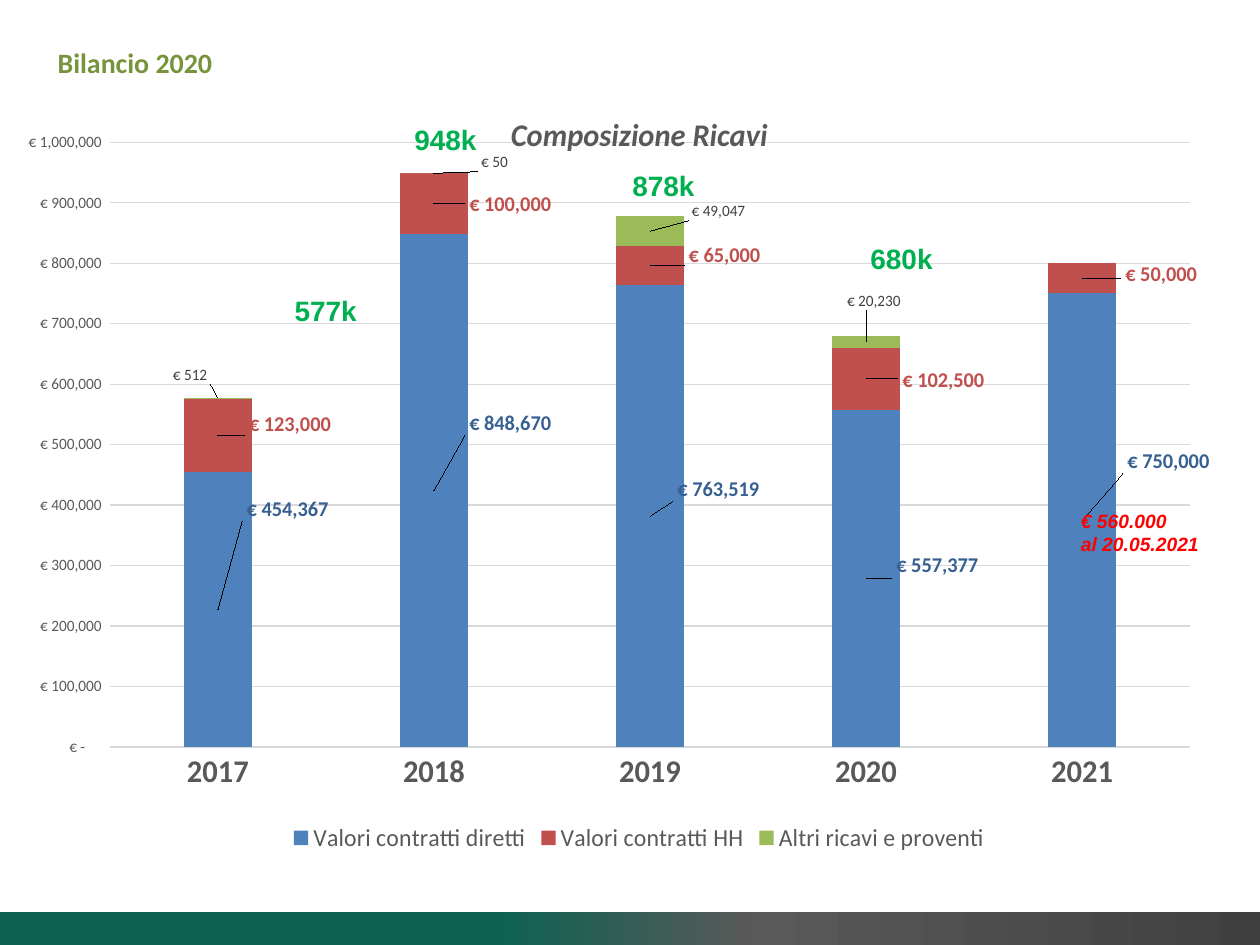
import copy

import pptx
import pptx.chart.data
import pptx.dml.color
import pptx.enum.chart
import pptx.enum.shapes
import pptx.enum.text
import pptx.oxml
import pptx.util
from pptx.util import Inches

COLORS = {"heading": "77933C", "total": "00B050", "note": "FF0000", "text": "595959",
          "grid": "D9D9D9", "direct": "4F81BD", "direct_label": "376092",
          "hh": "C0504D", "other": "9BBB59", "other_label": "404040"}
EURO = '_-"€"\\ * #,##0_-;\\-"€"\\ * #,##0_-;_-"€"\\ * "-"??_-;_-@_-'

YEARS = ["2017", "2018", "2019", "2020", "2021"]
# Label centres are slide positions in inches
SERIES = [
    {"name": "Valori contratti diretti", "values": [454367, 848670, 763519, 557377, 750000],
     "fill": "direct", "label": "direct_label", "size": 12, "bold": True,
     "centres": [(2.29, 4.04), (4.06, 3.36), (5.71, 3.88), (7.45, 4.49), (9.29, 3.66)]},
    {"name": "Valori contratti HH", "values": [123000, 100000, 65000, 102500, 50000],
     "fill": "hh", "label": "hh", "size": 12, "bold": True,
     "centres": [(2.31, 3.37), (4.06, 1.62), (5.76, 2.03), (7.5, 3.02), (9.23, 2.18)]},
    {"name": "Altri ricavi e proventi", "values": [512, 50, 49047, 20230, None],
     "fill": "other", "label": "other_label", "size": 9, "bold": False,
     "centres": [(1.49, 2.98), (3.93, 1.29), (5.71, 1.68), (6.93, 2.39), None]},
]
TOTALS = [("577k", 2.24, 2.28), ("948k", 3.19, 0.92), ("878k", 4.92, 1.29), ("680k", 6.81, 1.87)]
NOTE = ["€ 560.000", "al 20.05.2021"]
BAND = [(0, "404040"), (0.4, "595959"), (0.6, "0E6252"), (1, "0E6252")]

CHART = (0.2, 0.68, 9.45, 6.13)
INNER = (0.39, 0.45, 8.85, 4.8)            # plot area as set, in inches from the chart's corner
TITLE = (3.63, 0.17)                       # title, in inches from the chart's corner
PLOT = (0.86, 1.13, 8.58, 4.8)             # plot area as drawn, in inches on the slide
TOP_VALUE = 1000000
CHART_NS = 'xmlns:c="http://schemas.openxmlformats.org/drawingml/2006/chart"'
NO_LEADERS = (f'<c:extLst {CHART_NS}><c:ext uri="{{CE6537A1-D6FC-4f65-9D91-7224C49458BB}}" '
              'xmlns:c15="http://schemas.microsoft.com/office/drawing/2012/chart">'
              '<c15:showLeaderLines val="0"/></c:ext></c:extLst>')


def color(key):
    return pptx.dml.color.RGBColor.from_string(COLORS.get(key, key))


def style(font, size, key, bold=False, italic=False, name="Calibri"):
    font.size, font.bold, font.italic, font.name = pptx.util.Pt(size), bold, italic, name
    font.color.rgb = color(key)


def layout(lengths, **modes):
    """Manual layout from inches, turned into parts of the chart."""
    parts = {tag: round(length / whole, 4)
             for tag, length, whole in zip("xywh", lengths, CHART[2:] * 2)}
    items = "".join(f'<c:{tag} val="{value}"/>' for tag, value in {**modes, **parts}.items())
    return pptx.oxml.parse_xml(
        f"<c:layout {CHART_NS}><c:manualLayout>{items}</c:manualLayout></c:layout>")


def drop_layout(element):
    for old in element.findall(pptx.oxml.ns.qn("c:layout")):
        element.remove(old)


def add_text(page, place, lines, wrap=True, anchor="TOP", **look):
    box = page.shapes.add_textbox(*map(Inches, place))
    frame = box.text_frame
    frame.word_wrap = wrap
    frame.vertical_anchor = getattr(pptx.enum.text.MSO_ANCHOR, anchor)
    for index, line in enumerate(lines):
        para = frame.add_paragraph() if index else frame.paragraphs[0]
        span = para.add_run()
        span.text = line
        style(span.font, **look)


deck = pptx.Presentation()
deck.slide_width, deck.slide_height = Inches(10), Inches(7.5)
page = deck.slides.add_slide(deck.slide_layouts[6])

# Footer band
band = page.shapes.add_shape(pptx.enum.shapes.MSO_SHAPE.RECTANGLE,
                             *map(Inches, (-0.04, 7.24, 10.04, 0.27)))
band.shadow.inherit = False
band.line.fill.background()
band.fill.gradient()
band.fill.gradient_angle = 180
first_stop = band.fill.gradient_stops[0]._gs
for _ in range(len(BAND) - 2):
    first_stop.addnext(copy.deepcopy(first_stop))
for stop, (position, shade) in zip(band.fill.gradient_stops, BAND):
    stop.position = position
    stop.color.rgb = color(shade)

# Stacked columns
data = pptx.chart.data.CategoryChartData(number_format=EURO)
data.categories = YEARS
for entry in SERIES:
    data.add_series(entry["name"], entry["values"])
chart = page.shapes.add_chart(pptx.enum.chart.XL_CHART_TYPE.COLUMN_STACKED,
                              *map(Inches, CHART), data).chart
style(chart.font, 10, "000000")
plot = chart.plots[0]
plot.gap_width, plot.overlap, plot.vary_by_categories = 219, 100, False
plot_area = chart._chartSpace.chart.plotArea
drop_layout(plot_area)
plot_area.insert(0, layout(INNER, layoutTarget="inner", xMode="edge", yMode="edge"))

# Chart title and legend
title = chart.chart_title
span = title.text_frame.paragraphs[0].add_run()
span.text = "Composizione Ricavi"
style(span.font, 18, "text", bold=True, italic=True)
title.include_in_layout = True
title_xml = title._element
drop_layout(title_xml)
title_xml.find(pptx.oxml.ns.qn("c:tx")).addnext(layout(TITLE, xMode="edge", yMode="edge"))
chart.has_legend = True
chart.legend.position = pptx.enum.chart.XL_LEGEND_POSITION.BOTTOM
chart.legend.include_in_layout = False
style(chart.legend.font, 14, "text")

# Axes
years, euros = chart.category_axis, chart.value_axis
style(years.tick_labels.font, 18, "text", bold=True)
style(euros.tick_labels.font, 9, "text")
for axis in (years, euros):
    axis.major_tick_mark = axis.minor_tick_mark = pptx.enum.chart.XL_TICK_MARK.NONE
euros.minimum_scale, euros.maximum_scale, euros.major_unit = 0, TOP_VALUE, 100000
euros.tick_labels.number_format = EURO
euros.tick_labels.number_format_is_linked = False
euros.format.line.fill.background()
for line in (years.format.line, euros.major_gridlines.format.line):
    line.color.rgb = color("grid")
    line.width = pptx.util.Pt(0.75)

# Series, with each label moved from its segment's middle to its centre
base = [0] * len(YEARS)
for entry, series in zip(SERIES, plot.series):
    series.format.fill.solid()
    series.format.fill.fore_color.rgb = color(entry["fill"])
    labels = series.data_labels
    labels.show_value = True
    style(labels.font, entry["size"], entry["label"], entry["bold"])
    for index, (value, centre) in enumerate(zip(entry["values"], entry["centres"])):
        if value is None:
            continue
        middle_x = PLOT[0] + PLOT[2] * (index + 0.5) / len(YEARS)
        middle_y = PLOT[1] + PLOT[3] * (1 - (base[index] + value / 2) / TOP_VALUE)
        base[index] += value
        label = series.points[index].data_label
        style(label.font, entry["size"], entry["label"], entry["bold"])
        label.position = pptx.enum.chart.XL_LABEL_POSITION.CENTER
        label_xml = labels._element.findall(pptx.oxml.ns.qn("c:dLbl"))[index]
        label_xml.insert(1, layout((centre[0] - middle_x, centre[1] - middle_y)))
    labels._element.append(pptx.oxml.parse_xml(NO_LEADERS))

# Heading, yearly totals and note
add_text(page, (0.36, 0.25, 9, 0.49), ["Bilancio 2020"], anchor="MIDDLE",
         size=16, key="heading", bold=True)
for total, left, top in TOTALS:
    add_text(page, (left, top, 0.71, 0.37), [total], size=16, key="total", bold=True, name="Arial")
add_text(page, (8.48, 3.99, 1.14, 0.47), NOTE, wrap=False,
         size=11, key="note", bold=True, italic=True, name="Arial")

deck.save("out.pptx")
